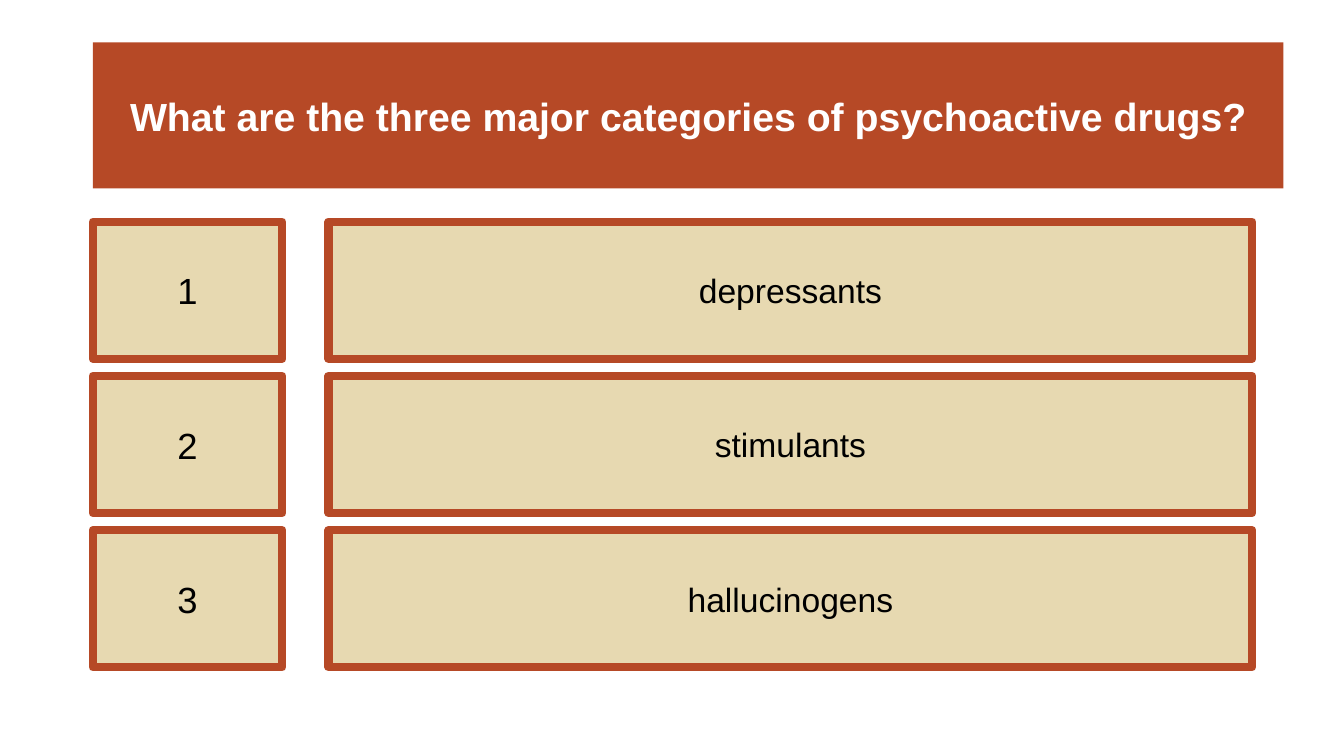
from dataclasses import dataclass

from lxml import etree
from pptx import Presentation
from pptx.dml.color import RGBColor
from pptx.enum.shapes import MSO_SHAPE
from pptx.enum.text import MSO_ANCHOR, PP_ALIGN
from pptx.oxml.ns import qn
from pptx.util import Inches, Pt

RECTANGLE = MSO_SHAPE.RECTANGLE
MIDDLE = MSO_ANCHOR.MIDDLE
CENTER = PP_ALIGN.CENTER


@dataclass(frozen=True)
class Theme:
    font: str = "Arial"
    rust: RGBColor = RGBColor(0xB6, 0x49, 0x26)
    sand: RGBColor = RGBColor(0xE7, 0xD9, 0xB1)
    white: RGBColor = RGBColor(0xFF, 0xFF, 0xFF)
    black: RGBColor = RGBColor(0, 0, 0)
    title_size: int = 28
    number_size: int = 26
    answer_size: int = 24
    border: int = 6


THEME = Theme()

# Grid in inches: (left, width) of columns, (top, height) of rows
SLIDE_WIDTH, SLIDE_HEIGHT = 13.33, 7.5
TITLE_COLUMN, TITLE_ROW = (0.92, 11.81), (0.42, 1.45)
NUMBER_COLUMN, ANSWER_COLUMN = (0.92, 1.88), (3.26, 9.16)
FIRST_ROW_TOP, ROW_HEIGHT, ROW_PITCH = 2.2, 1.36, 1.53

QUESTION = "What are the three major categories of psychoactive drugs?"
ANSWERS = ["depressants", "stimulants", "hallucinogens"]


def set_attributes(target, values):
    for name, value in values.items():
        setattr(target, name, value)


def add_box(slide, column, row, text, fill, size, color, bold=False):
    """Add a filled rectangle with one centred line of text."""
    (left, width), (top, height) = column, row
    shape = slide.shapes.add_shape(
        RECTANGLE, Inches(left), Inches(top), Inches(width), Inches(height))
    shape.shadow.inherit = False
    shape.fill.solid()
    shape.fill.fore_color.rgb = fill
    shape.line.fill.background()
    set_attributes(shape.text_frame, {"word_wrap": True, "vertical_anchor": MIDDLE})
    paragraph = shape.text_frame.paragraphs[0]
    set_attributes(paragraph, {"text": text, "alignment": CENTER})
    font = paragraph.runs[0].font
    set_attributes(font, {"name": THEME.font, "size": Pt(size), "bold": bold})
    font.color.rgb = color
    return shape


def add_bordered_box(slide, column, row, text, size):
    """Add a sand box with a thick, round-cornered rust border."""
    shape = add_box(slide, column, row, text, THEME.sand, size, THEME.black)
    shape.line.color.rgb = THEME.rust
    shape.line.width = Pt(THEME.border)
    outline = shape.element.spPr.find(qn("a:ln"))
    etree.SubElement(outline, qn("a:round"))


def main():
    presentation = Presentation()
    set_attributes(presentation, {"slide_width": Inches(SLIDE_WIDTH),
                                  "slide_height": Inches(SLIDE_HEIGHT)})
    slide = presentation.slides.add_slide(presentation.slide_layouts[6])

    # Question banner
    add_box(slide, TITLE_COLUMN, TITLE_ROW, QUESTION, THEME.rust,
            THEME.title_size, THEME.white, bold=True)

    # Numbered answers
    for index, answer in enumerate(ANSWERS):
        row = (FIRST_ROW_TOP + index * ROW_PITCH, ROW_HEIGHT)
        add_bordered_box(slide, NUMBER_COLUMN, row, str(index + 1), THEME.number_size)
        add_bordered_box(slide, ANSWER_COLUMN, row, answer, THEME.answer_size)

    presentation.save("out.pptx")


if __name__ == "__main__":
    main()
